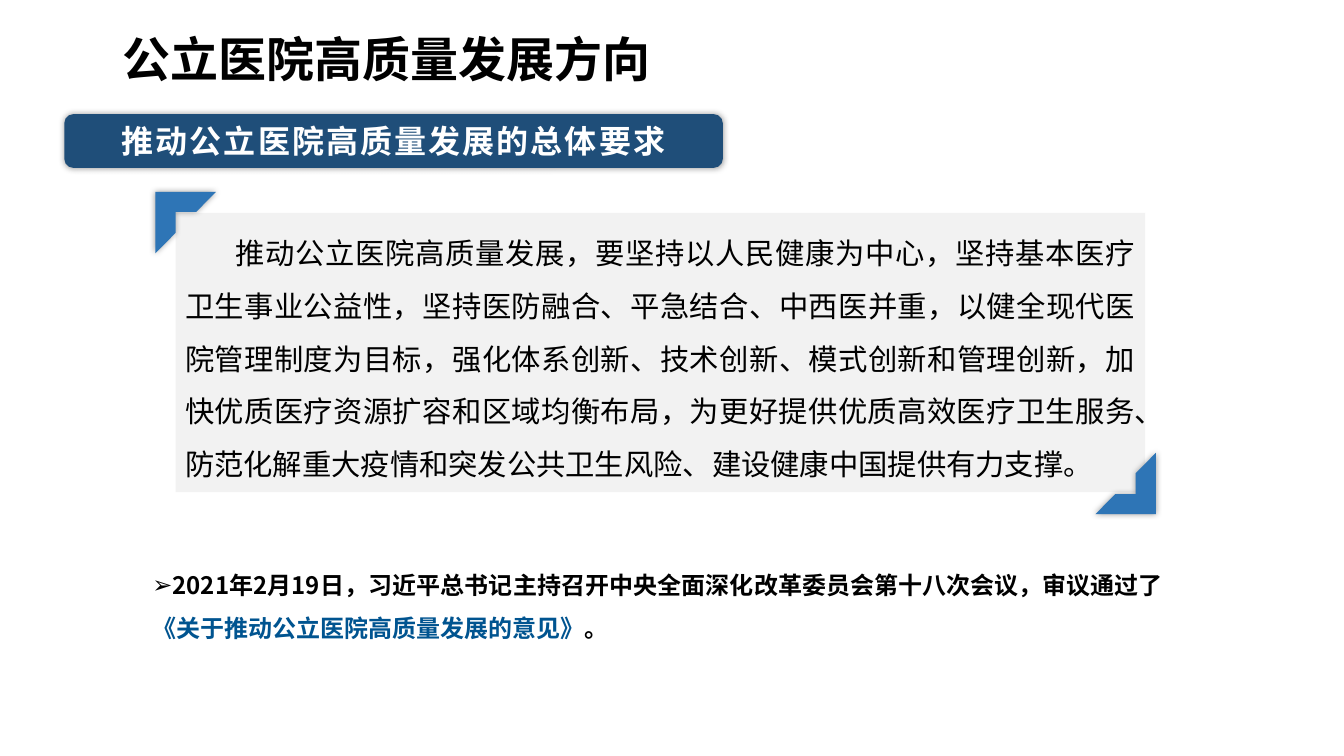
from dataclasses import dataclass

from lxml.etree import SubElement
from pptx import Presentation
from pptx.dml.color import RGBColor
from pptx.enum.shapes import MSO_SHAPE
from pptx.enum.text import MSO_ANCHOR, MSO_AUTO_SIZE, PP_ALIGN
from pptx.oxml.ns import qn
from pptx.util import Inches, Pt


@dataclass(frozen=True)
class Theme:
    heading_font: str = "Arial"
    body_font: str = "Noto Sans CJK SC"
    black: str = "000000"
    white: str = "FFFFFF"
    navy: str = "1F4E79"
    blue: str = "2E75B6"
    grey: str = "F2F2F2"
    accent: str = "005490"
    title_size: int = 36
    banner_size: int = 24
    body_size: int = 22
    note_size: int = 18


THEME = Theme()


def add_span(para, text, size, color=THEME.black, font=THEME.body_font,
             bold=False, spacing=0):
    """Add a formatted run; spacing is in points between characters."""
    span = para.add_run()
    span.text = text
    span.font.size = Pt(size)
    span.font.bold = bold
    span.font.name = font
    span.font.color.rgb = RGBColor.from_string(color)
    properties = span.font._element
    SubElement(properties, qn("a:ea"), typeface=THEME.body_font)
    if spacing:
        properties.set("spc", str(round(spacing * 100)))


def first_paragraph(shape, align, anchor=MSO_ANCHOR.TOP, line_spacing=None,
                    auto_size=MSO_AUTO_SIZE.NONE):
    frame = shape.text_frame
    frame.word_wrap = True
    frame.auto_size = auto_size
    frame.vertical_anchor = anchor
    para = frame.paragraphs[0]
    para.alignment = align
    para.line_spacing = line_spacing
    return para


def add_glow(shape):
    """Give the shape an even, soft shadow on all sides."""
    effects = shape._element.spPr.find(qn("a:effectLst"))
    shadow = SubElement(effects, qn("a:outerShdw"), blurRad=str(Pt(5)),
                        dist="0", dir="0", algn="ctr", rotWithShape="0")
    color = SubElement(shadow, qn("a:srgbClr"), val=THEME.black)
    SubElement(color, qn("a:alpha"), val="40000")


def add_block(page, kind, left, top, width, height, fill, glow=False):
    block = page.shapes.add_shape(kind, Inches(left), Inches(top),
                                  Inches(width), Inches(height))
    block.shadow.inherit = False
    block.fill.solid()
    block.fill.fore_color.rgb = RGBColor.from_string(fill)
    block.line.fill.background()
    if glow:
        add_glow(block)
    return block


def add_title(page, text):
    title = page.shapes.title
    title.left, title.top = Inches(1.28), Inches(0.32)
    title.width, title.height = Inches(5.66), Inches(0.58)
    para = first_paragraph(title, PP_ALIGN.LEFT, MSO_ANCHOR.MIDDLE)
    title.text_frame.margin_left = title.text_frame.margin_right = 0
    add_span(para, text, THEME.title_size, font=THEME.heading_font, bold=True)


def add_banner(page, text):
    banner = add_block(page, MSO_SHAPE.ROUNDED_RECTANGLE, 0.67, 1.19, 6.86,
                       0.56, THEME.navy, glow=True)
    para = first_paragraph(banner, PP_ALIGN.CENTER,
                           auto_size=MSO_AUTO_SIZE.SHAPE_TO_FIT_TEXT)
    add_span(para, text, THEME.banner_size, color=THEME.white, bold=True,
             spacing=1.6)


def add_panel(page, text):
    panel = add_block(page, MSO_SHAPE.RECTANGLE, 1.83, 2.22, 10.1, 2.91,
                      THEME.grey)
    para = first_paragraph(panel, PP_ALIGN.JUSTIFY, line_spacing=1.5)
    para._p.get_or_add_pPr().set("indent", str(Inches(0.52)))
    add_span(para, text, THEME.body_size)

    # Corner brackets at opposite ends of the panel
    for left, top, rotation in ((1.62, 2, 0), (11.41, 4.72, 180)):
        corner = add_block(page, MSO_SHAPE.HALF_FRAME, left, top, 0.63, 0.64,
                           THEME.blue, glow=True)
        corner.rotation = rotation


def add_note(page, spans):
    box = page.shapes.add_textbox(Inches(1.49), Inches(5.75),
                                  Inches(10.73), Inches(1.01))
    para = first_paragraph(box, PP_ALIGN.JUSTIFY, line_spacing=1.5,
                           auto_size=MSO_AUTO_SIZE.SHAPE_TO_FIT_TEXT)
    properties = para._p.get_or_add_pPr()
    SubElement(properties, qn("a:buFont"), typeface=THEME.heading_font)
    SubElement(properties, qn("a:buChar"), char="➢")
    for text, color in spans:
        add_span(para, text, THEME.note_size, color=color, bold=True)


def main():
    deck = Presentation()
    deck.slide_width, deck.slide_height = Inches(14), Inches(7.88)
    page = deck.slides.add_slide(deck.slide_layouts.get_by_name("Title Only"))

    # Heading
    add_title(page, "公立医院高质量发展方向")
    add_banner(page, "推动公立医院高质量发展的总体要求")

    # Overall requirements
    add_panel(page, (
        "推动公立医院高质量发展，要坚持以人民健康为中心，坚持基本医疗卫生事业公益性，"
        "坚持医防融合、平急结合、中西医并重，以健全现代医院管理制度为目标，"
        "强化体系创新、技术创新、模式创新和管理创新，加快优质医疗资源扩容和区域均衡布局，"
        "为更好提供优质高效医疗卫生服务、防范化解重大疫情和突发公共卫生风险、"
        "建设健康中国提供有力支撑。"))

    # Policy background
    add_note(page, (
        ("2021年2月19日，习近平总书记主持召开中央全面深化改革委员会第十八次会议，审议通过了",
         THEME.black),
        ("《关于推动公立医院高质量发展的意见》", THEME.accent),
        ("。", THEME.black)))

    deck.save("out.pptx")


if __name__ == "__main__":
    main()
